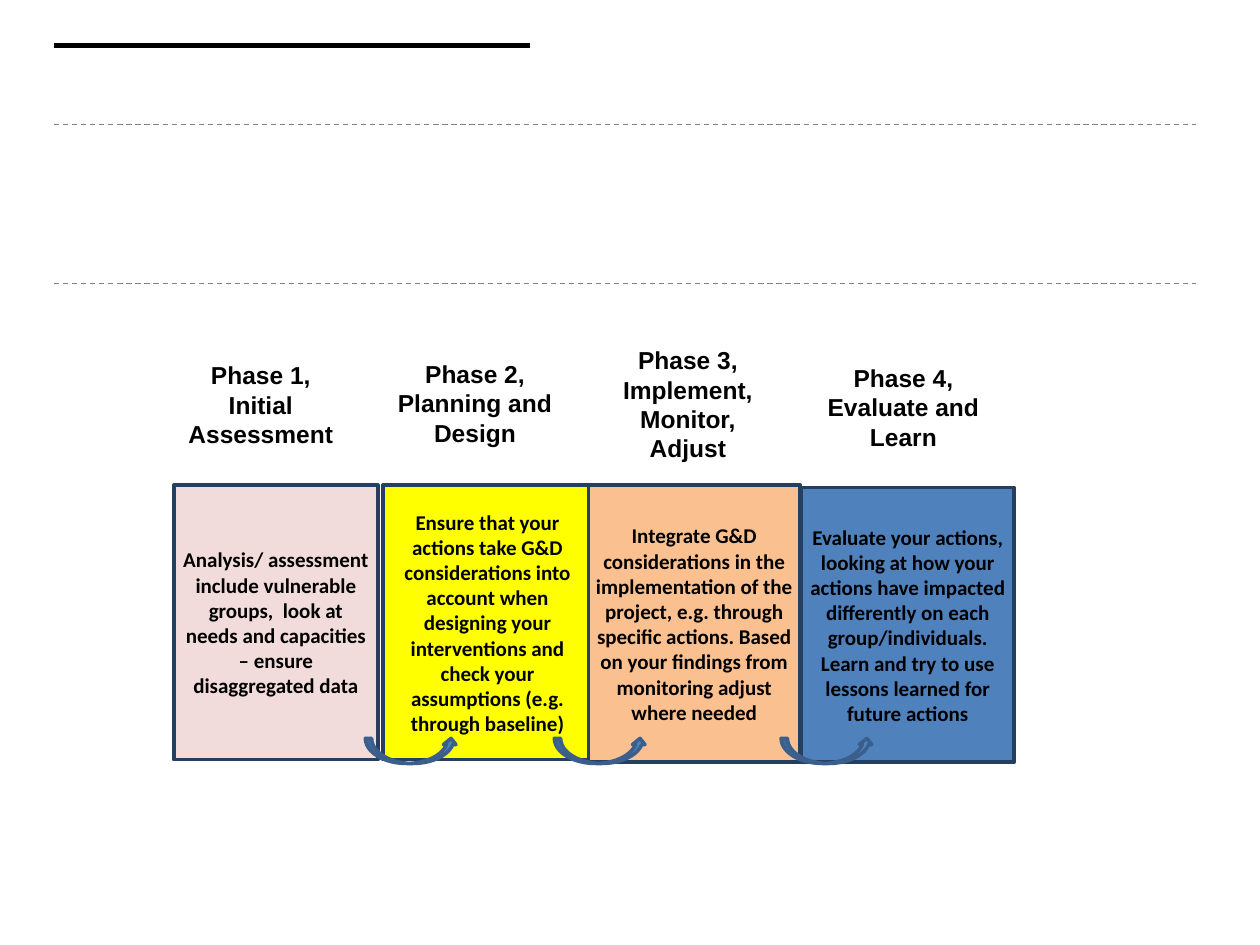
from dataclasses import dataclass
from lxml import etree
from pptx import Presentation
from pptx.dml.color import RGBColor as Rgb
from pptx.enum import dml, shapes, text
from pptx.oxml import ns
from pptx.util import Inches, Pt


@dataclass(frozen=True)
class Theme:
    ink: str = "000000"
    rule: str = "808080"
    edge: str = "243F60"
    blue: str = "4F81BD"
    curve: str = "3A5F8C"
    pink: str = "F2DCDB"
    yellow: str = "FFFF00"
    peach: str = "FAC090"
    head: int = 14
    body: int = 12


theme = Theme()


def add_shape(kind, place, fill, edge):
    shape = slide.shapes.add_shape(kind, *map(Inches, place))
    shape.shadow.inherit = False
    shape.fill.solid()
    shape.fill.fore_color.rgb = Rgb.from_string(fill)
    shape.line.color.rgb = Rgb.from_string(edge)
    shape.line.width = Pt(2)
    return shape


def add_words(shape, words, font, size):
    frame = shape.text_frame
    frame.word_wrap = True
    para = frame.paragraphs[0]
    para.alignment = text.PP_ALIGN.CENTER
    run = para.add_run()
    run.text = words
    run.font.name = font
    run.font.size = Pt(size)
    run.font.bold = True
    run.font.color.rgb = Rgb.from_string(theme.ink)
    return frame


deck = Presentation()
deck.slide_width = Inches(10)
deck.slide_height = Inches(7.5)
slide = deck.slides.add_slide(deck.slide_layouts[6])

rules = [
    (0.36, 4.21, theme.ink, 3, None),
    (2.25, 9.49, theme.rule, 0.75, dml.MSO_LINE.DASH),
    (0.99, 9.49, theme.rule, 0.75, dml.MSO_LINE.DASH),
]
for top, right, color, width, dash in rules:
    rule = slide.shapes.add_connector(
        shapes.MSO_CONNECTOR.STRAIGHT,
        Inches(0.43), Inches(top), Inches(right), Inches(top),
    )
    rule.line.color.rgb = Rgb.from_string(color)
    rule.line.width = Pt(width)
    if dash:
        rule.line.dash_style = dash
    etree.SubElement(rule._element.spPr, ns.qn("a:effectLst"))

steps = [
    ((1.38, 3.85, 1.62, 2.18), theme.pink,
     "Analysis/ assessment include vulnerable groups,  look at needs and "
     "capacities – ensure disaggregated data"),
    ((3.04, 3.85, 1.66, 2.18), theme.yellow,
     "Ensure that your actions take G&D considerations into account when "
     "designing your interventions and check your assumptions (e.g. through "
     "baseline)"),
    ((4.67, 3.85, 1.68, 2.2), theme.peach,
     "Integrate G&D considerations in the implementation of the project, e.g. "
     "through specific actions. Based on your findings from monitoring adjust "
     "where needed"),
    ((6.36, 3.87, 1.69, 2.18), theme.blue,
     "Evaluate your actions, looking at how your actions have impacted "
     "differently on each group/individuals. Learn and try to use lessons "
     "learned for future actions"),
]
for place, fill, words in steps:
    box = add_shape(shapes.MSO_SHAPE.RECTANGLE, place, fill, theme.edge)
    frame = add_words(box, words, "Calibri", theme.body)
    frame.vertical_anchor = text.MSO_ANCHOR.MIDDLE
    frame.margin_left = frame.margin_right = Inches(0.06)
    frame.margin_top = frame.margin_bottom = Inches(0.03)

for left in (2.9, 4.4, 6.2):
    add_shape(shapes.MSO_SHAPE.CURVED_UP_ARROW, (left, 5.86, 0.73, 0.2),
              theme.blue, theme.curve)

heads = [
    (1.34, 2.81, 0.81, "Phase 1, Initial Assessment"),
    (3.04, 2.8, 0.81, "Phase 2, Planning and Design"),
    (4.73, 2.69, 1.04, "Phase 3, Implement, Monitor, Adjust"),
    (6.44, 2.83, 0.81, "Phase 4, Evaluate and Learn"),
]
for left, top, height, words in heads:
    label = slide.shapes.add_textbox(
        Inches(left), Inches(top), Inches(1.46), Inches(height))
    frame = add_words(label, words, "Arial", theme.head)
    frame.auto_size = text.MSO_AUTO_SIZE.SHAPE_TO_FIT_TEXT

deck.save("out.pptx")
